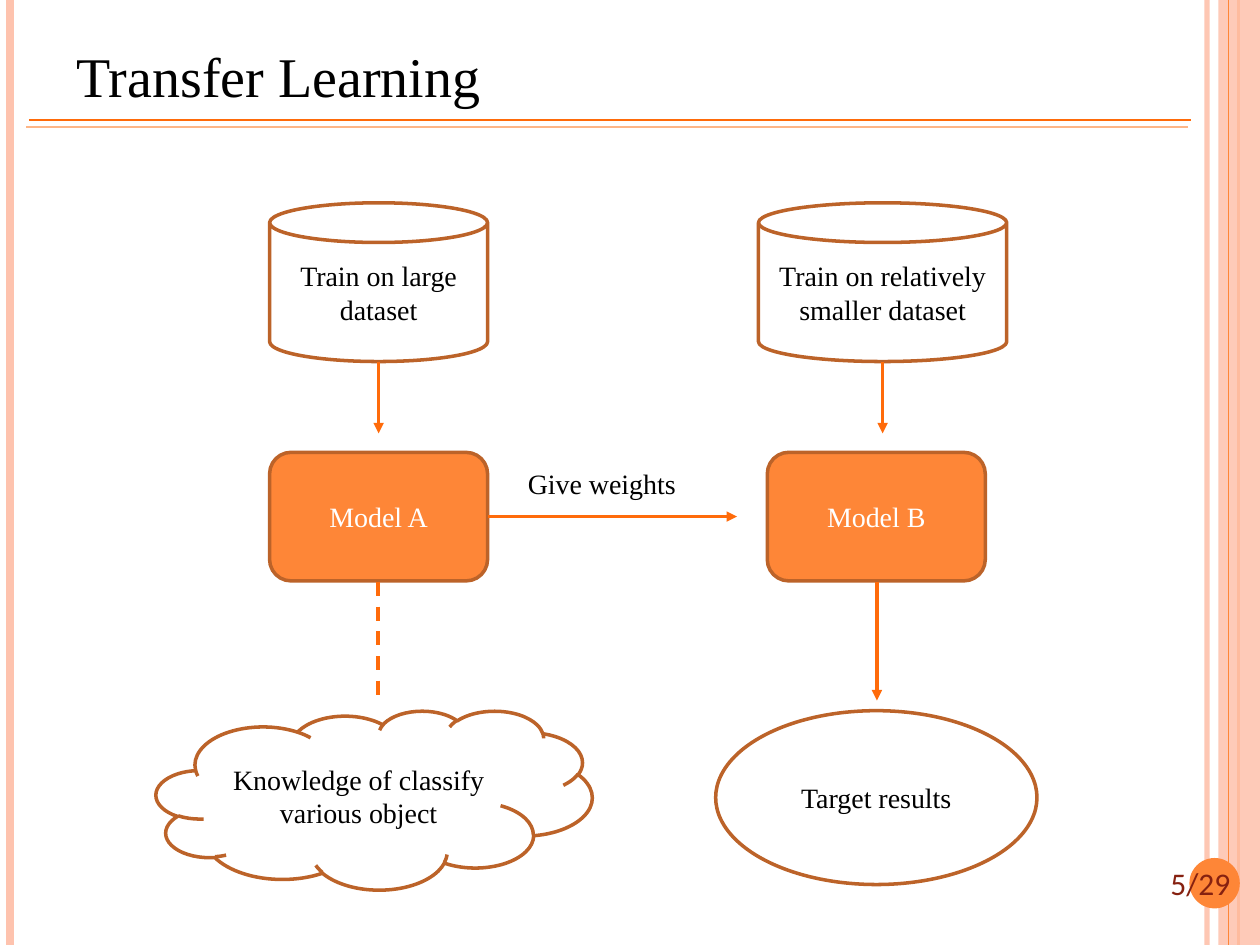
import pptx
import pptx.util
from lxml import etree
from pptx.dml.color import RGBColor
from pptx.enum.dml import MSO_LINE
from pptx.enum.shapes import MSO_CONNECTOR, MSO_SHAPE
from pptx.enum.text import MSO_ANCHOR, MSO_AUTO_SIZE, PP_ALIGN
from pptx.oxml.ns import qn
from pptx.util import Inches

ORANGE = RGBColor(0xFE, 0x86, 0x37)
ARROW = RGBColor(0xFF, 0x6B, 0x0A)
OUTLINE = RGBColor(0xBC, 0x63, 0x29)
PEACH = RGBColor(0xFE, 0xC3, 0xAE)
LIGHT_ORANGE = RGBColor(0xFE, 0xB6, 0x87)
MAROON = RGBColor(0x86, 0x21, 0x10)
BLACK = RGBColor(0, 0, 0)
WHITE = RGBColor(0xFF, 0xFF, 0xFF)


class SlideBuilder:
    font = "Times New Roman"
    text_size = 16

    def __init__(self, page):
        self.page = page

    def style_text(self, frame, text, size, color, font=None):
        frame.text = text
        for span in frame.paragraphs[0].runs:
            span.font.name = font or self.font
            span.font.size = pptx.util.Pt(size)
            span.font.color.rgb = color

    def fade(self, item, opacity):
        color = item._element.spPr.find(".//" + qn("a:srgbClr"))
        etree.SubElement(color, qn("a:alpha"), val=str(opacity * 1000))

    def shape(self, kind, left, top, width, height, fill=None, outline=None):
        item = self.page.shapes.add_shape(
            kind, Inches(left), Inches(top), Inches(width), Inches(height))
        item.shadow.inherit = False
        if fill is None:
            item.fill.background()
        else:
            item.fill.solid()
            item.fill.fore_color.rgb = fill
        if outline is None:
            item.line.fill.background()
        else:
            item.line.color.rgb = outline
            item.line.width = pptx.util.Pt(2)
        return item

    def node(self, kind, text, left, top, width, height, fill=None):
        item = self.shape(kind, left, top, width, height, fill, OUTLINE)
        frame = item.text_frame
        frame.word_wrap = True
        frame.vertical_anchor = MSO_ANCHOR.MIDDLE
        self.style_text(frame, text, self.text_size, WHITE if fill else BLACK)
        frame.paragraphs[0].alignment = PP_ALIGN.CENTER

    def line(self, x1, y1, x2, y2, color=ARROW, width=2, dashed=False, arrow=False):
        item = self.page.shapes.add_connector(
            MSO_CONNECTOR.STRAIGHT, Inches(x1), Inches(y1), Inches(x2), Inches(y2))
        item.line.color.rgb = color
        item.line.width = pptx.util.Pt(width)
        if dashed:
            item.line.dash_style = MSO_LINE.DASH
        properties = item._element.spPr
        if arrow:
            etree.SubElement(properties.find(qn("a:ln")), qn("a:tailEnd"), type="triangle")
        etree.SubElement(properties, qn("a:effectLst"))
        return item

    def label(self, text, left, top, width, height, size=text_size, color=BLACK,
              font=None, wrap=False, anchor=MSO_ANCHOR.TOP):
        box = self.page.shapes.add_textbox(
            Inches(left), Inches(top), Inches(width), Inches(height))
        frame = box.text_frame
        frame.word_wrap = wrap
        frame.auto_size = MSO_AUTO_SIZE.NONE if wrap else MSO_AUTO_SIZE.SHAPE_TO_FIT_TEXT
        frame.vertical_anchor = anchor
        self.style_text(frame, text, size, color, font)


def main():
    deck = pptx.Presentation()
    deck.slide_width, deck.slide_height = Inches(10), Inches(7.5)
    builder = SlideBuilder(deck.slides.add_slide(deck.slide_layouts[6]))

    # Side stripes
    builder.fade(builder.line(9.58, 0, 9.58, 7.5, PEACH, 3), 93)
    builder.line(0.08, 0, 0.08, 7.5, PEACH, 4.5)
    builder.line(9.83, 0, 9.83, 7.5, ORANGE, 1.5)
    builder.fade(builder.shape(MSO_SHAPE.RECTANGLE, 9.67, 0, 0.33, 7.5, PEACH), 87)
    builder.line(9.75, 0, 9.75, 7.5, ORANGE, 0.75)

    # Title and its double rule
    builder.line(0.23, 0.95, 9.45, 0.95, ARROW, 1)
    builder.line(0.21, 1.01, 9.43, 1.01, LIGHT_ORANGE, 1)
    builder.label("Transfer Learning", 0.51, 0.13, 8.17, 0.78, 32,
                  wrap=True, anchor=MSO_ANCHOR.BOTTOM)

    # Page number
    builder.shape(MSO_SHAPE.OVAL, 9.44, 6.81, 0.4, 0.4, ORANGE)
    builder.label("5/29", 9.19, 6.81, 0.85, 0.4, 18, MAROON, "Calibri")

    # Datasets and models
    columns = [
        ("Train on large dataset", 2.14, 1.73, "Model A", 2.14),
        ("Train on relatively smaller dataset", 6.02, 1.97, "Model B", 6.09),
    ]
    for dataset, left, width, model, model_left in columns:
        center = left + width / 2
        builder.node(MSO_SHAPE.CAN, dataset, left, 1.61, width, 1.26)
        builder.line(center, 2.87, center, 3.44, arrow=True)
        builder.node(MSO_SHAPE.ROUNDED_RECTANGLE, model, model_left, 3.59, 1.73, 1.02, ORANGE)

    # Weight transfer
    builder.line(3.87, 4.1, 5.85, 4.1, arrow=True)
    builder.label("Give weights", 4.09, 3.65, 1.39, 0.37)

    # Outcomes
    builder.line(3, 4.62, 3, 5.56, dashed=True)
    builder.node(MSO_SHAPE.CLOUD, "Knowledge of classify various object",
                 1.24, 5.64, 3.46, 1.42)
    builder.line(6.96, 4.62, 6.96, 5.56, arrow=True)
    builder.node(MSO_SHAPE.OVAL, "Target results", 5.68, 5.64, 2.55, 1.38)

    deck.save("out.pptx")


if __name__ == "__main__":
    main()
